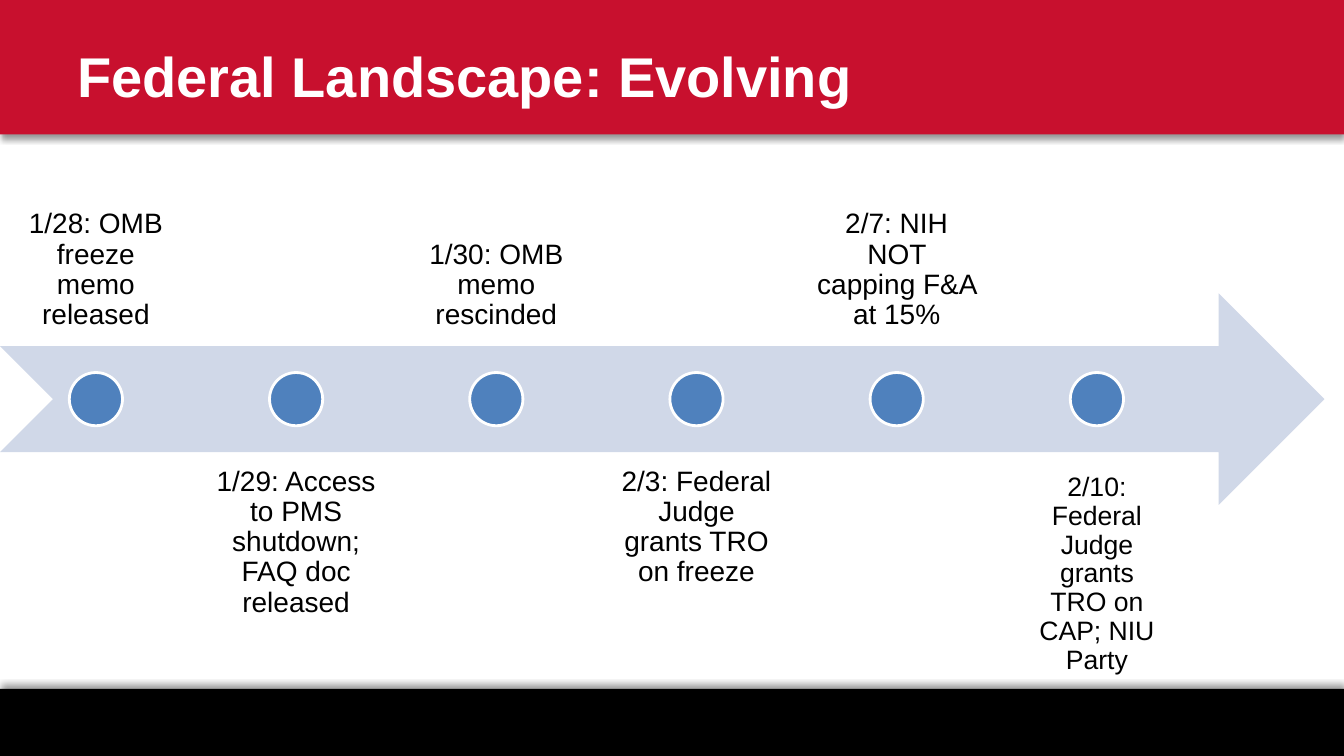
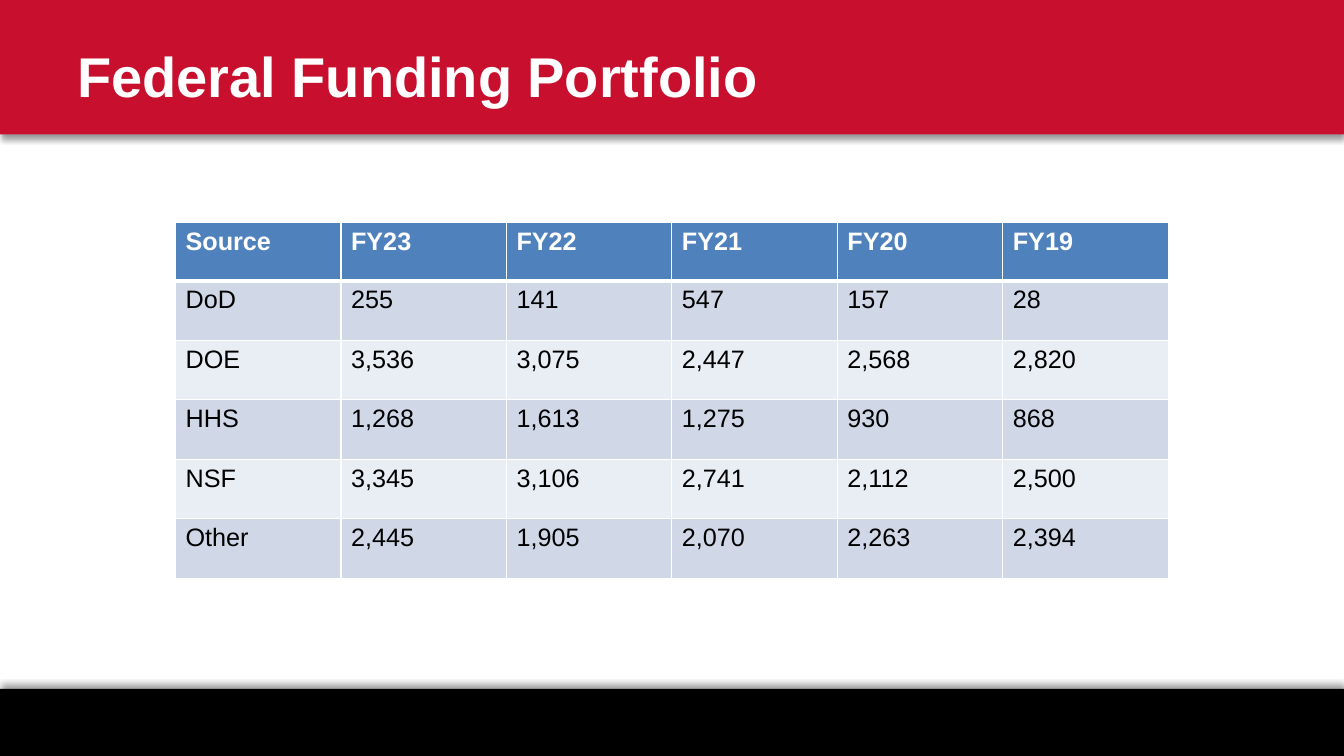
from lxml import etree
from pptx import Presentation
from pptx.dml.color import RGBColor
from pptx.enum.shapes import MSO_SHAPE
from pptx.enum.text import MSO_ANCHOR, MSO_AUTO_SIZE, PP_ALIGN
from pptx.oxml import parse_xml
from pptx.oxml.ns import nsdecls, qn
from pptx.util import Pt

WIDTH, HEIGHT = 960, 540
FONT = "Arial"
COLORS = {
    "black": "000000",
    "white": "FFFFFF",
    "red": "C8102E",
    "blue": "4F81BD",
    "pale": "D0D8E8",
    "paler": "E9EDF4",
}

EVENTS = [
    "1/28: OMB freeze memo released",
    "1/29: Access to PMS shutdown; FAQ doc released",
    "1/30: OMB memo rescinded",
    "2/3: Federal Judge grants TRO on freeze",
    "2/7: NIH NOT capping F&A at 15%",
    "2/10: Federal Judge grants TRO on CAP; NIU Party",
]
FUNDING = [
    ["Source", "FY23", "FY22", "FY21", "FY20", "FY19"],
    ["DoD", "255", "141", "547", "157", "28"],
    ["DOE", "3,536", "3,075", "2,447", "2,568", "2,820"],
    ["HHS", "1,268", "1,613", "1,275", "930", "868"],
    ["NSF", "3,345", "3,106", "2,741", "2,112", "2,500"],
    ["Other", "2,445", "1,905", "2,070", "2,263", "2,394"],
]


def rgb(name):
    return RGBColor.from_string(COLORS[name])


class Deck:
    """Holds the presentation, its style and the current slide."""

    def __init__(self):
        self.prs = Presentation()
        self.prs.slide_width, self.prs.slide_height = Pt(WIDTH), Pt(HEIGHT)
        self.layout = self.prs.slide_layouts[5]
        self.s = None

    def add_slide(self, title):
        first = self.s is None
        self.s = self.prs.slides.add_slide(self.layout)
        if first:
            self.band(0, 96, "red", 90)
            self.band(492, 48, "black", 270)
        sp = self.s.shapes.title
        sp.left, sp.top, sp.width, sp.height = Pt(48), Pt(12), Pt(792), Pt(84)
        tf = sp.text_frame
        tf.text = title
        tf.word_wrap = True
        tf.auto_size = MSO_AUTO_SIZE.NONE
        tf.vertical_anchor = MSO_ANCHOR.MIDDLE
        self.style(tf.paragraphs[0], 40, "white", True, PP_ALIGN.LEFT)

    def style(self, p, size, color="black", bold=False, align=PP_ALIGN.LEFT):
        p.alignment = align
        for r in p.runs:
            r.font.name, r.font.size, r.font.bold = FONT, Pt(size), bold
            r.font.color.rgb = rgb(color)

    def shape(self, kind, x, y, w, h, fill, line=None):
        sp = self.s.shapes.add_shape(kind, Pt(x), Pt(y), Pt(w), Pt(h))
        sp.shadow.inherit = False
        sp.fill.solid()
        sp.fill.fore_color.rgb = rgb(fill)
        if line:
            sp.line.color.rgb = rgb(line)
            sp.line.width = Pt(2)
        else:
            sp.line.fill.background()
        return sp

    def band(self, y, h, fill, direction):
        """Draw a full-width band with a shadow and move it to the layout."""
        sp = self.shape(MSO_SHAPE.RECTANGLE, 0, y, WIDTH, h, fill)
        effects = sp.element.spPr.find(qn("a:effectLst"))
        effects.append(parse_xml(
            f'<a:outerShdw {nsdecls("a")} blurRad="{Pt(4)}" dist="{Pt(3)}" '
            f'dir="{direction * 60000}" rotWithShape="0">'
            f'<a:srgbClr val="{COLORS["black"]}"><a:alpha val="40000"/>'
            '</a:srgbClr></a:outerShdw>'))
        self.layout.element.cSld.spTree.insert(2, sp.element)

    def label(self, text, center, y, w, h, size, inset, anchor):
        box = self.s.shapes.add_textbox(Pt(center - w / 2), Pt(y), Pt(w), Pt(h))
        tf = box.text_frame
        tf.text = text
        tf.word_wrap = True
        tf.vertical_anchor = anchor
        tf.margin_left = tf.margin_right = Pt(inset)
        tf.margin_top = tf.margin_bottom = Pt(inset)
        p = tf.paragraphs[0]
        p.line_spacing = 0.9
        self.style(p, size, align=PP_ALIGN.CENTER)

    def timeline(self, events):
        """Draw the arrow with dots and labels that alternate above and below."""
        arrow_top, arrow_height, dot = 209.5, 151.2, 38
        middle = arrow_top + arrow_height / 2
        self.shape(MSO_SHAPE.NOTCHED_RIGHT_ARROW, 0, arrow_top, 946, arrow_height, "pale")
        for i, text in enumerate(events):
            center = 68.5 + 143 * i
            self.shape(MSO_SHAPE.OVAL, center - dot / 2, middle - dot / 2,
                       dot, dot, "blue", "white")
            if i == len(events) - 1:
                self.label(text, center, 327.6, 118, 146, 19, 10.8, MSO_ANCHOR.TOP)
            elif i % 2:
                self.label(text, center, 322.6, 137.5, 151.2, 20, 11, MSO_ANCHOR.TOP)
            else:
                self.label(text, center, 96, 137.5, 151.2, 20, 11, MSO_ANCHOR.BOTTOM)

    def border(self, cell, **widths):
        tc_pr = cell._tc.get_or_add_tcPr()
        for side in "LRTB":
            ln = etree.SubElement(tc_pr, qn(f"a:ln{side}"), w=str(Pt(widths.get(side, 1))))
            fill = etree.SubElement(ln, qn("a:solidFill"))
            etree.SubElement(fill, qn("a:srgbClr"), val=COLORS["white"])

    def table(self, rows, x, y, col_width, head_height, row_height):
        n_rows, n_cols = len(rows), len(rows[0])
        height = head_height + row_height * (n_rows - 1)
        table = self.s.shapes.add_table(
            n_rows, n_cols, Pt(x), Pt(y), Pt(col_width * n_cols), Pt(height)).table
        table.first_row = table.horz_banding = False
        for col in table.columns:
            col.width = Pt(col_width)
        for i, values in enumerate(rows):
            head = i == 0
            table.rows[i].height = Pt(head_height if head else row_height)
            for j, value in enumerate(values):
                cell = table.cell(i, j)
                cell.text = value
                self.border(cell, T=3 if i == 1 else 1, B=3 if head else 1)
                cell.fill.solid()
                cell.fill.fore_color.rgb = rgb("blue" if head else "pale" if i % 2 else "paler")
                self.style(cell.text_frame.paragraphs[0], 18,
                           "white" if head else "black", head)


def main():
    deck = Deck()
    deck.add_slide("Federal Landscape: Evolving")
    deck.timeline(EVENTS)
    deck.add_slide("Federal Funding Portfolio")
    deck.table(FUNDING, 125.4, 158.8, 118.2, 41.8, 42.5)
    deck.prs.save("out.pptx")


if __name__ == "__main__":
    main()
